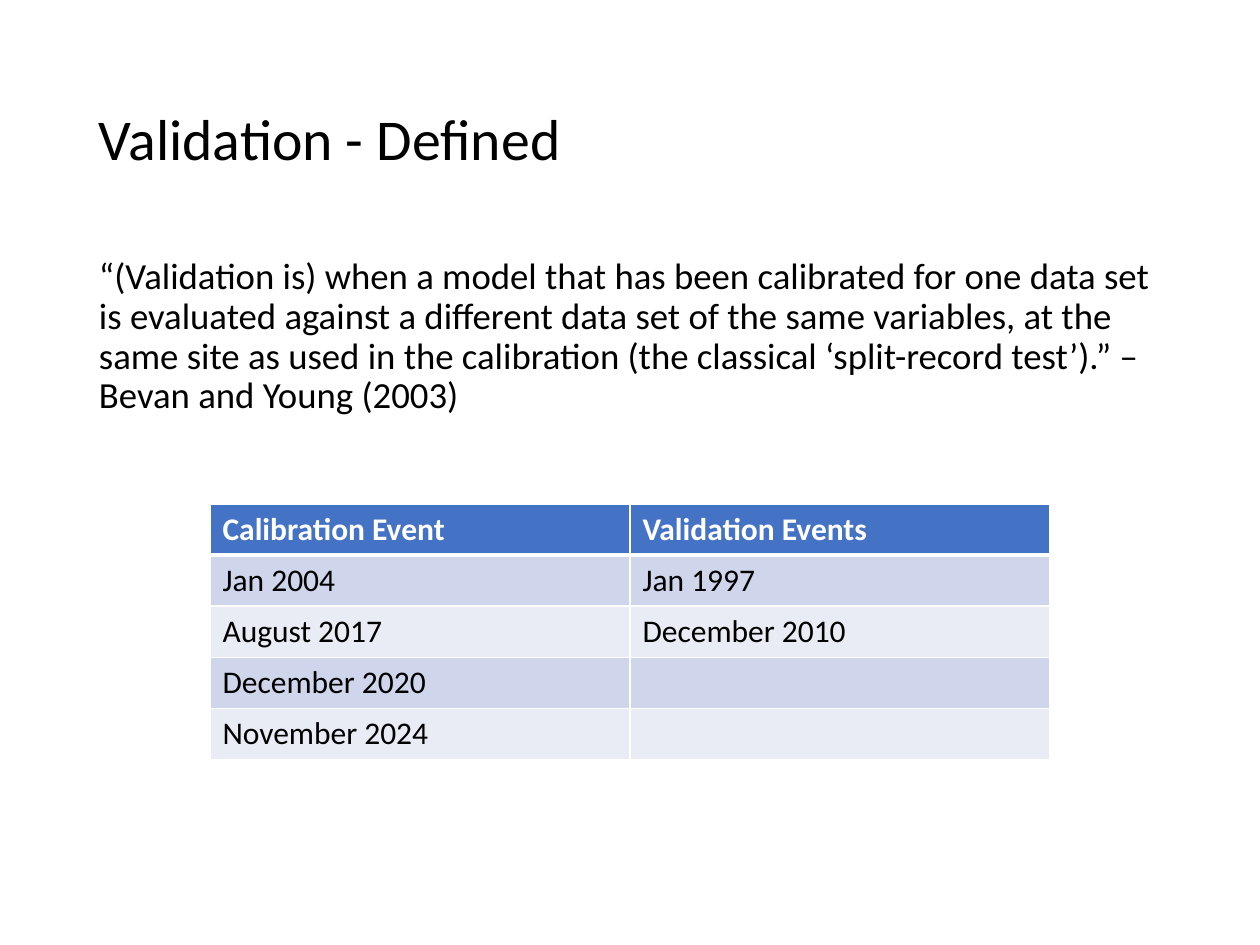
from lxml import etree
from pptx import Presentation
from pptx.dml.color import RGBColor
from pptx.enum.text import MSO_ANCHOR
from pptx.oxml.ns import qn
from pptx.util import Pt

TITLE = "Validation - Defined"
QUOTE = (
    "“(Validation is) when a model that has been calibrated for one data set "
    "is evaluated against a different data set of the same variables, at the "
    "same site as used in the calibration (the classical ‘split-record test’).” "
    "–Bevan and Young (2003)"
)
EVENTS = [
    ("Calibration Event", "Validation Events"),
    ("Jan 2004", "Jan 1997"),
    ("August 2017", "December 2010"),
    ("December 2020", ""),
    ("November 2024", ""),
]

FONT = "Calibri"
BLACK = RGBColor(0x00, 0x00, 0x00)
WHITE = RGBColor(0xFF, 0xFF, 0xFF)
HEADER_BLUE = RGBColor(0x44, 0x72, 0xC4)
BANDS = (RGBColor(0xE9, 0xEB, 0xF5), RGBColor(0xCF, 0xD5, 0xEA))
MIDDLE, TOP = MSO_ANCHOR.MIDDLE, MSO_ANCHOR.TOP

SLIDE_W, SLIDE_H = 720, 540
TEXT_W = 621
TABLE_W, TABLE_TOP, ROW_H = 480, 288, 29.2


def style_font(font, size, color, bold=False):
    font.name, font.size, font.bold = FONT, Pt(size), bold
    font.color.rgb = color


def add_text(slide, text, top, height, size, anchor, space_before=0):
    left = (SLIDE_W - TEXT_W) / 2
    box = slide.shapes.add_textbox(Pt(left), Pt(top), Pt(TEXT_W), Pt(height))
    frame = box.text_frame
    frame.word_wrap = True
    frame.vertical_anchor = anchor
    frame.text = text
    paragraph = frame.paragraphs[0]
    paragraph.line_spacing = 0.9
    paragraph.space_before = Pt(space_before)
    style_font(paragraph.runs[0].font, size, BLACK)


def add_border(cell, side, width):
    line = etree.SubElement(cell._tc.get_or_add_tcPr(), qn(f"a:{side}"), w=str(Pt(width)))
    fill = etree.SubElement(line, qn("a:solidFill"))
    etree.SubElement(fill, qn("a:srgbClr"), val=str(WHITE))


def add_events(slide):
    rows, cols = len(EVENTS), len(EVENTS[0])
    table = slide.shapes.add_table(
        rows, cols, Pt((SLIDE_W - TABLE_W) / 2), Pt(TABLE_TOP),
        Pt(TABLE_W), Pt(ROW_H * rows)).table
    for r, events in enumerate(EVENTS):
        table.rows[r].height = Pt(ROW_H)
        header = r == 0
        for c, event in enumerate(events):
            cell = table.cell(r, c)
            cell.text = event
            style_font(cell.text_frame.paragraphs[0].font, 18,
                       WHITE if header else BLACK, header)
            for run in cell.text_frame.paragraphs[0].runs:
                style_font(run.font, 18, WHITE if header else BLACK, header)
            # The rule under the header is heavier than the grid
            for side in ("lnL", "lnR", "lnT", "lnB"):
                heavy = (r, side) in ((0, "lnB"), (1, "lnT"))
                add_border(cell, side, 3 if heavy else 1)
            cell.fill.solid()
            cell.fill.fore_color.rgb = HEADER_BLUE if header else BANDS[r % 2]


def main():
    prs = Presentation()
    prs.slide_width, prs.slide_height = Pt(SLIDE_W), Pt(SLIDE_H)
    slide = prs.slides.add_slide(prs.slide_layouts[6])
    # Title and quotation
    add_text(slide, TITLE, 28.8, 104.4, 33, MIDDLE)
    add_text(slide, QUOTE, 144, 342.7, 21, TOP, space_before=7.5)
    # Calibration and validation events
    add_events(slide)
    prs.save("out.pptx")


if __name__ == "__main__":
    main()
